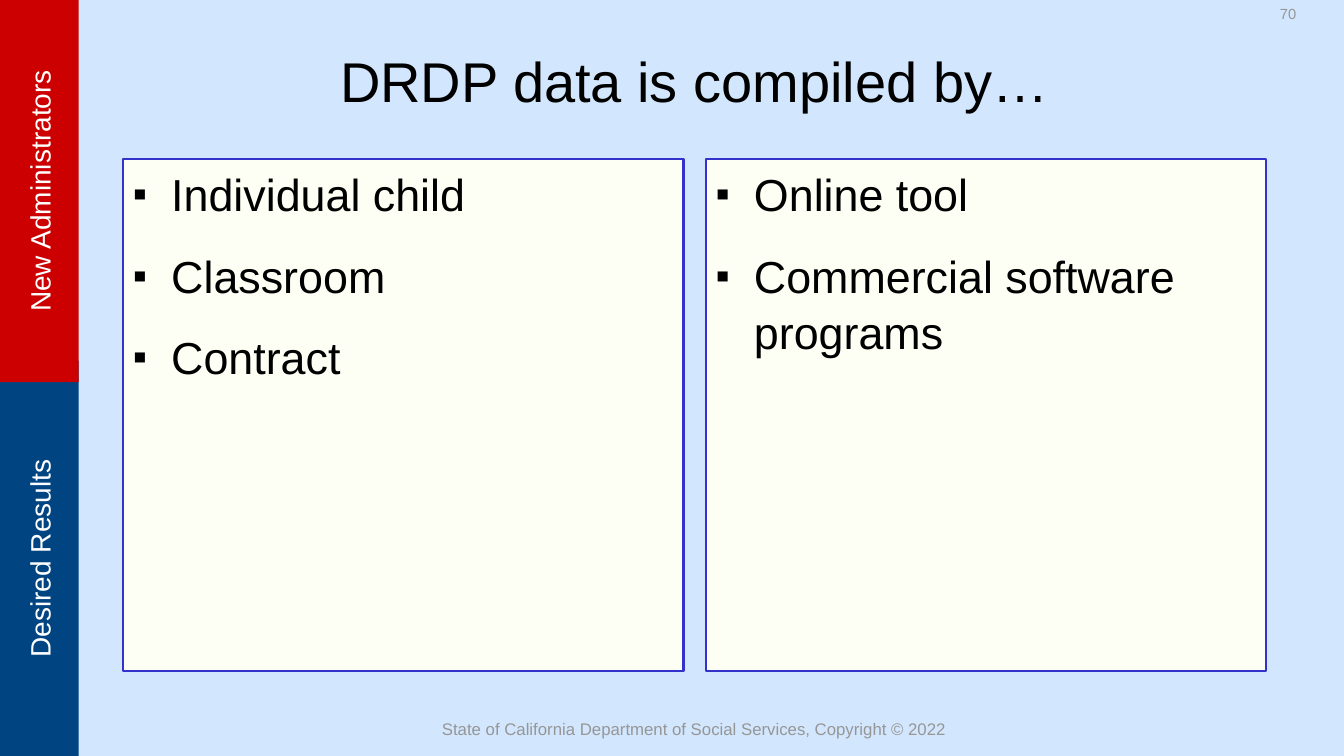
from lxml import etree
from pptx import Presentation
from pptx.dml.color import RGBColor
from pptx.enum.shapes import MSO_SHAPE
from pptx.enum.text import MSO_ANCHOR, PP_ALIGN
from pptx.oxml.ns import qn
from pptx.util import Inches, Pt

RECT = MSO_SHAPE.RECTANGLE
TOP, MIDDLE = MSO_ANCHOR.TOP, MSO_ANCHOR.MIDDLE
LEFT, CENTER = PP_ALIGN.LEFT, PP_ALIGN.CENTER

SKY = RGBColor(0xD2, 0xE7, 0xFE)
NAVY = RGBColor(0x01, 0x44, 0x82)
RED = RGBColor(0xCC, 0x00, 0x00)
CREAM = RGBColor(0xFE, 0xFF, 0xF4)
BORDER = RGBColor(0x33, 0x33, 0xCC)
BLACK = RGBColor(0x00, 0x00, 0x00)
WHITE = RGBColor(0xFF, 0xFF, 0xFF)
GRAY = RGBColor(0x96, 0x96, 0x96)

SIDEBAR_WIDTH = 0.78
PANEL_LEFT, PANEL_TOP, PANEL_WIDTH, PANEL_HEIGHT = 1.22, 1.58, 5.56, 5.08
PANEL_GAP = 0.22
PANELS = [
    ["Individual child", "Classroom", "Contract"],
    ["Online tool", "Commercial software programs"],
]


def write(p, text, size, color, align):
    p.alignment = align
    r = p.add_run()
    r.text = text
    for name, value in {"name": "Arial", "size": Pt(size)}.items():
        setattr(r.font, name, value)
    r.font.color.rgb = color


def add_rect(s, box, fill):
    sp = s.shapes.add_shape(RECT, *map(Inches, box))
    sp.shadow.inherit = False
    sp.fill.solid()
    sp.fill.fore_color.rgb = fill
    sp.line.fill.background()
    return sp


def add_sidebar_tab(s, top, length, fill, label):
    left = (SIDEBAR_WIDTH - length) / 2
    box_top = top + (length - SIDEBAR_WIDTH) / 2
    sp = add_rect(s, (left, box_top, length, SIDEBAR_WIDTH), fill)
    sp.rotation = 270
    tf = sp.text_frame
    tf.word_wrap = False
    tf.vertical_anchor = MIDDLE
    write(tf.paragraphs[0], label, 20, WHITE, CENTER)


def add_label(s, box, text, size, color, anchor):
    tf = s.shapes.add_textbox(*map(Inches, box)).text_frame
    tf.word_wrap = True
    tf.vertical_anchor = anchor
    write(tf.paragraphs[0], text, size, color, CENTER)


def add_bullet(p):
    pPr = p._p.get_or_add_pPr()
    pPr.set("marL", str(Inches(0.38)))
    pPr.set("indent", str(-Inches(0.38)))
    for tag, key, value in (
        ("a:buSzPct", "val", "90000"),
        ("a:buFont", "typeface", "Arial"),
        ("a:buChar", "char", "▪"),
    ):
        etree.SubElement(pPr, qn(tag)).set(key, value)


def add_panel(s, box, items):
    sp = add_rect(s, box, CREAM)
    sp.line.color.rgb = BORDER
    sp.line.width = Pt(1.5)
    tf = sp.text_frame
    tf.word_wrap = True
    tf.vertical_anchor = TOP
    for i, item in enumerate(items):
        p = tf.add_paragraph() if i else tf.paragraphs[0]
        add_bullet(p)
        p.line_spacing = 1.05
        if i:
            p.space_before = Pt(18)
        write(p, item, 32, BLACK, LEFT)


def build_slide(prs):
    s = prs.slides.add_slide(prs.slide_layouts[6])
    s.background.fill.solid()
    s.background.fill.fore_color.rgb = SKY
    add_sidebar_tab(s, 3.58, 3.92, NAVY, "Desired Results")
    add_sidebar_tab(s, 0, 3.79, RED, "New Administrators")
    add_label(s, (PANEL_LEFT, 0.17, 11.33, 1.25),
              "DRDP data is compiled by…", 40, BLACK, MIDDLE)
    for i, items in enumerate(PANELS):
        left = PANEL_LEFT + i * (PANEL_WIDTH + PANEL_GAP)
        add_panel(s, (left, PANEL_TOP, PANEL_WIDTH, PANEL_HEIGHT), items)
    add_label(s, (4.26, 7.07, 5.25, 0.33),
              "State of California Department of Social Services, Copyright © 2022",
              12, GRAY, MIDDLE)
    add_label(s, (12.22, 0, 1.11, 0.33), "70", 10.5, GRAY, TOP)


def main():
    prs = Presentation()
    prs.slide_width = Inches(13.33)
    prs.slide_height = Inches(7.5)
    build_slide(prs)
    prs.save("out.pptx")


if __name__ == "__main__":
    main()
